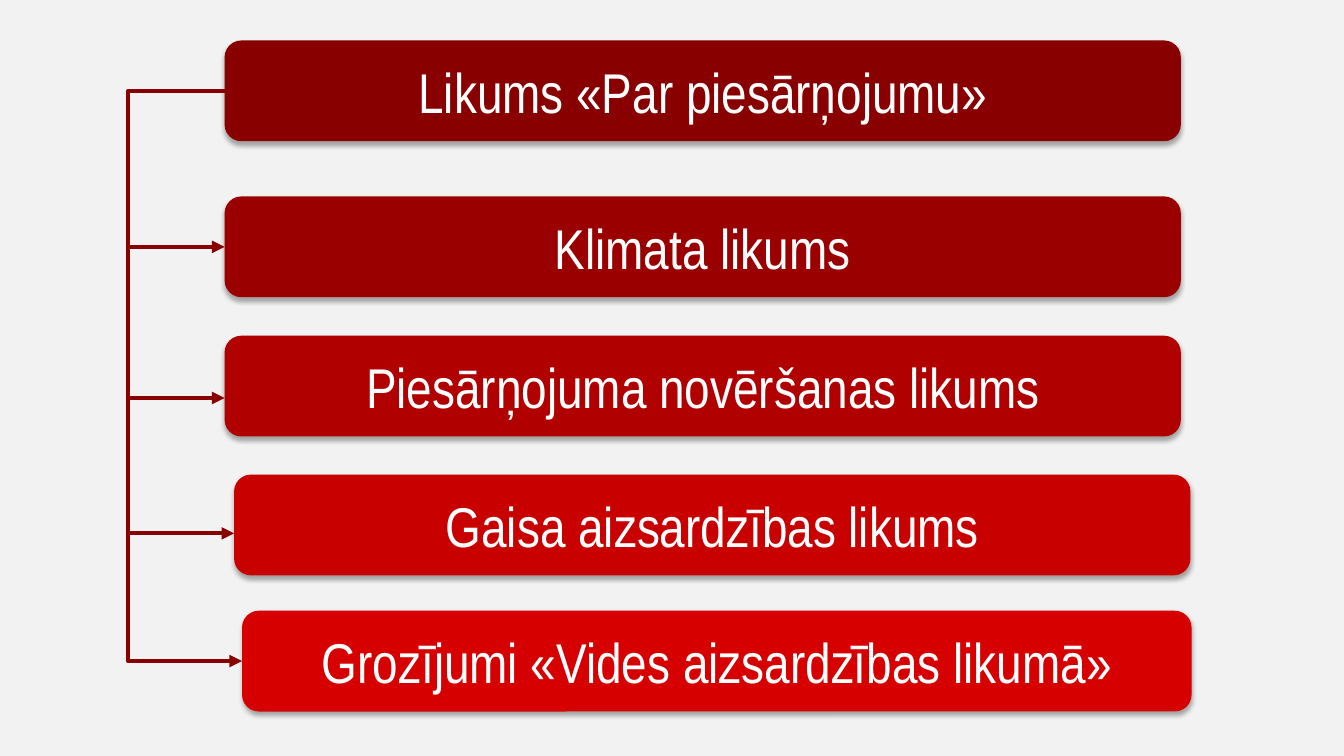
"""Build a slide linking the pollution law to the laws that follow from it."""
from dataclasses import dataclass

from lxml import etree
from pptx import Presentation
from pptx import util as u
from pptx.dml.color import RGBColor
from pptx.enum import shapes, text
from pptx.oxml.ns import qn


@dataclass(frozen=True)
class Theme:
    background: str = "F2F2F2"
    line: str = "880000"
    text: str = "FFFFFF"
    font: str = "Arial Narrow"
    size: float = 40
    line_width: float = 3


@dataclass(frozen=True)
class Law:
    name: str
    color: str
    top: float
    left: float = 5.66
    width: float = 24.1


@dataclass(frozen=True)
class Branch:
    law: int
    y: float


THEME = Theme()
LAW_HEIGHT = 2.54
TRUNK_X = 3.23
LAWS = [
    Law("Likums «Par piesārņojumu»", "880000", 1.02),
    Law("Klimata likums", "9A0000", 4.95),
    Law("Piesārņojuma novēršanas likums", "B00000", 8.46),
    Law("Gaisa aizsardzības likums", "C80000", 11.96, left=5.9),
    Law("Grozījumi «Vides aizsardzības likumā»", "D60000", 15.39, left=6.1, width=23.93),
]
BRANCHES = [Branch(1, 6.22), Branch(2, 10.03), Branch(3, 13.44)]


def write(frame, words: str, *, size: float, color: str, font: str) -> None:
    """Put centred, formatted text in a frame."""
    frame.word_wrap = True
    frame.vertical_anchor = text.MSO_ANCHOR.MIDDLE
    paragraph = frame.paragraphs[0]
    paragraph.alignment = text.PP_ALIGN.CENTER
    run = paragraph.add_run()
    run.text = words
    run.font.size = u.Pt(size)
    run.font.name = font
    run.font.color.rgb = RGBColor.from_string(color)


def add_shadow(box) -> None:
    """Give a box a soft shadow just below it."""
    box.shadow.inherit = False
    effects = box._element.spPr.find(qn("a:effectLst"))
    shadow = etree.SubElement(effects, qn("a:outerShdw"), blurRad=str(u.Pt(3.5)),
                              dist=str(u.Pt(2.2)), dir="5400000", rotWithShape="0")
    black = etree.SubElement(shadow, qn("a:srgbClr"), val="000000")
    etree.SubElement(black, qn("a:alpha"), val="32000")


def draw_law(slide, law: Law):
    """Draw one law as a rounded box."""
    box = slide.shapes.add_shape(
        shapes.MSO_SHAPE.ROUNDED_RECTANGLE,
        u.Cm(law.left), u.Cm(law.top), u.Cm(law.width), u.Cm(LAW_HEIGHT))
    box.fill.solid()
    box.fill.fore_color.rgb = RGBColor.from_string(law.color)
    box.line.fill.background()
    add_shadow(box)
    write(box.text_frame, law.name, size=THEME.size, color=THEME.text, font=THEME.font)
    return box


def draw_arrow(slide, kind, x1: float, y1: float, x2: float, y2: float):
    """Draw a connector with an arrowhead at its end."""
    arrow = slide.shapes.add_connector(kind, u.Cm(x1), u.Cm(y1), u.Cm(x2), u.Cm(y2))
    arrow.line.width = u.Pt(THEME.line_width)
    arrow.line.color.rgb = RGBColor.from_string(THEME.line)
    properties = arrow._element.spPr
    etree.SubElement(properties.find(qn("a:ln")), qn("a:tailEnd"), type="triangle")
    etree.SubElement(properties, qn("a:effectLst"))
    return arrow


def draw_trunk(slide, boxes: list) -> None:
    """Join the first law to the last around the left of the others."""
    first, last = LAWS[0], LAWS[-1]
    trunk = draw_arrow(slide, shapes.MSO_CONNECTOR.ELBOW,
                       first.left, first.top + LAW_HEIGHT / 2,
                       last.left, last.top + LAW_HEIGHT / 2)
    trunk.begin_connect(boxes[0], 1)
    trunk.end_connect(boxes[-1], 1)
    bend = round((TRUNK_X - first.left) / (last.left - first.left) * 100000)
    adjustments = trunk._element.spPr.find(qn("a:prstGeom")).get_or_add_avLst()
    etree.SubElement(adjustments, qn("a:gd"), name="adj1", fmla=f"val {bend}")


def draw_branch(slide, branch: Branch, boxes: list) -> None:
    """Draw an arrow from the trunk to a law, joined where it meets the middle."""
    law = LAWS[branch.law]
    arrow = draw_arrow(slide, shapes.MSO_CONNECTOR.STRAIGHT,
                       TRUNK_X, branch.y, law.left, branch.y)
    if math_middle(law) == branch.y:
        arrow.end_connect(boxes[branch.law], 1)


def math_middle(law: Law) -> float:
    """Return the height of a law's middle."""
    return round(law.top + LAW_HEIGHT / 2, 2)


def main() -> None:
    """Build and save the slide."""
    deck = Presentation()
    deck.slide_width, deck.slide_height = u.Cm(33.87), u.Cm(19.05)
    slide = deck.slides.add_slide(deck.slide_layouts[6])
    slide.background.fill.solid()
    slide.background.fill.fore_color.rgb = RGBColor.from_string(THEME.background)
    boxes = [draw_law(slide, law) for law in LAWS]
    draw_trunk(slide, boxes)
    for branch in BRANCHES:
        draw_branch(slide, branch, boxes)
    deck.save("out.pptx")


if __name__ == "__main__":
    main()
